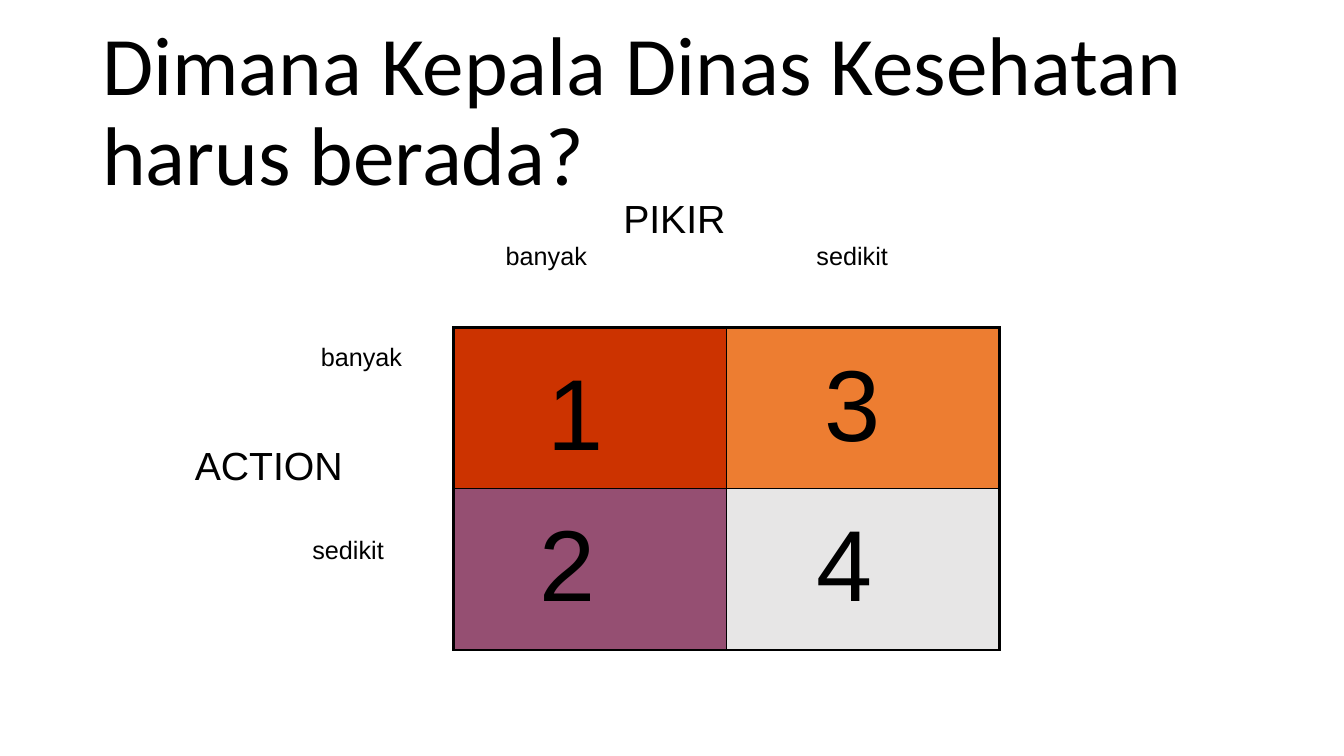
"""Build a two-by-two thinking and action matrix slide."""
from lxml import etree
from pptx import Presentation, util as u
from pptx.dml.color import RGBColor
from pptx.enum import text
from pptx.oxml import ns

COLOURS = {"ink": "000000", "red": "CC3300", "orange": "ED7D31", "plum": "954F72", "grey": "E7E6E6"}
TITLE = "Dimana Kepala Dinas Kesehatan harus berada?"
TITLE_PLACE = (11, 4.8, 138, 17.4)
MATRIX_PLACE = (54, 39, 65, 38.4)
MATRIX = [["red", "orange"], ["plum", "grey"]]
ROW_SPAN = {18: 4.8, 28: 6.8, 72: 15.6}
LABELS = [
    ("PIKIR", 28, 73, 22.5, 22),
    ("ACTION", 28, 22, 52, 21),
    ("banyak", 18, 37, 40, 14),
    ("sedikit", 18, 36, 63, 11),
    ("banyak", 18, 59, 28, 14),
    ("sedikit", 18, 96, 28, 11),
    ("1", 72, 64, 41, 13),
    ("2", 72, 63, 59, 13),
    ("3", 72, 97, 40, 13),
    ("4", 72, 96, 59, 13),
]
THICK, THIN = 2.25, 1

deck = Presentation()
deck.slide_width, deck.slide_height = u.Inches(13.33), u.Inches(7.5)
page = deck.slides.add_slide(deck.slide_layouts[6])


def grid(*spans):
    """Turn grid units, twelve to the inch, into lengths."""
    return [u.Inches(span / 12) for span in spans]


def add_text(words, place, frame_format, font_format):
    """Add a text box and return its paragraph."""
    frame = page.shapes.add_textbox(*grid(*place)).text_frame
    para = frame.paragraphs[0]
    span = para.add_run()
    span.text = words
    span.font.color.rgb = RGBColor.from_string(COLOURS["ink"])
    for target, values in ((frame, frame_format), (span.font, font_format)):
        for name, value in values.items():
            setattr(target, name, value)
    return para


def add_border(cell, side, width):
    """Draw one solid side of a table cell."""
    line = etree.SubElement(cell._tc.get_or_add_tcPr(), ns.qn("a:ln" + side), w=str(u.Pt(width)))
    fill = etree.SubElement(line, ns.qn("a:solidFill"))
    etree.SubElement(fill, ns.qn("a:srgbClr"), val=COLOURS["ink"])


title = add_text(TITLE, TITLE_PLACE,
                 {"word_wrap": True, "vertical_anchor": text.MSO_ANCHOR.MIDDLE},
                 {"name": "Calibri", "size": u.Pt(59.4)})
title.line_spacing = 0.9

table = page.shapes.add_table(2, 2, *grid(*MATRIX_PLACE)).table
for row, colours in enumerate(MATRIX):
    for column, colour in enumerate(colours):
        cell = table.cell(row, column)
        outer = {"L": column == 0, "R": column == 1, "T": row == 0, "B": row == 1}
        for side, is_outer in outer.items():
            add_border(cell, side, THICK if is_outer else THIN)
        cell.fill.solid()
        cell.fill.fore_color.rgb = RGBColor.from_string(COLOURS[colour])

for words, size, left, top, width in LABELS:
    label = add_text(words, (left, top, width, ROW_SPAN[size]),
                     {"word_wrap": True, "auto_size": text.MSO_AUTO_SIZE.SHAPE_TO_FIT_TEXT},
                     {"name": "Arial", "size": u.Pt(size)})
    before = etree.SubElement(label._p.get_or_add_pPr(), ns.qn("a:spcBef"))
    etree.SubElement(before, ns.qn("a:spcPct"), val="50000")

deck.save("out.pptx")
